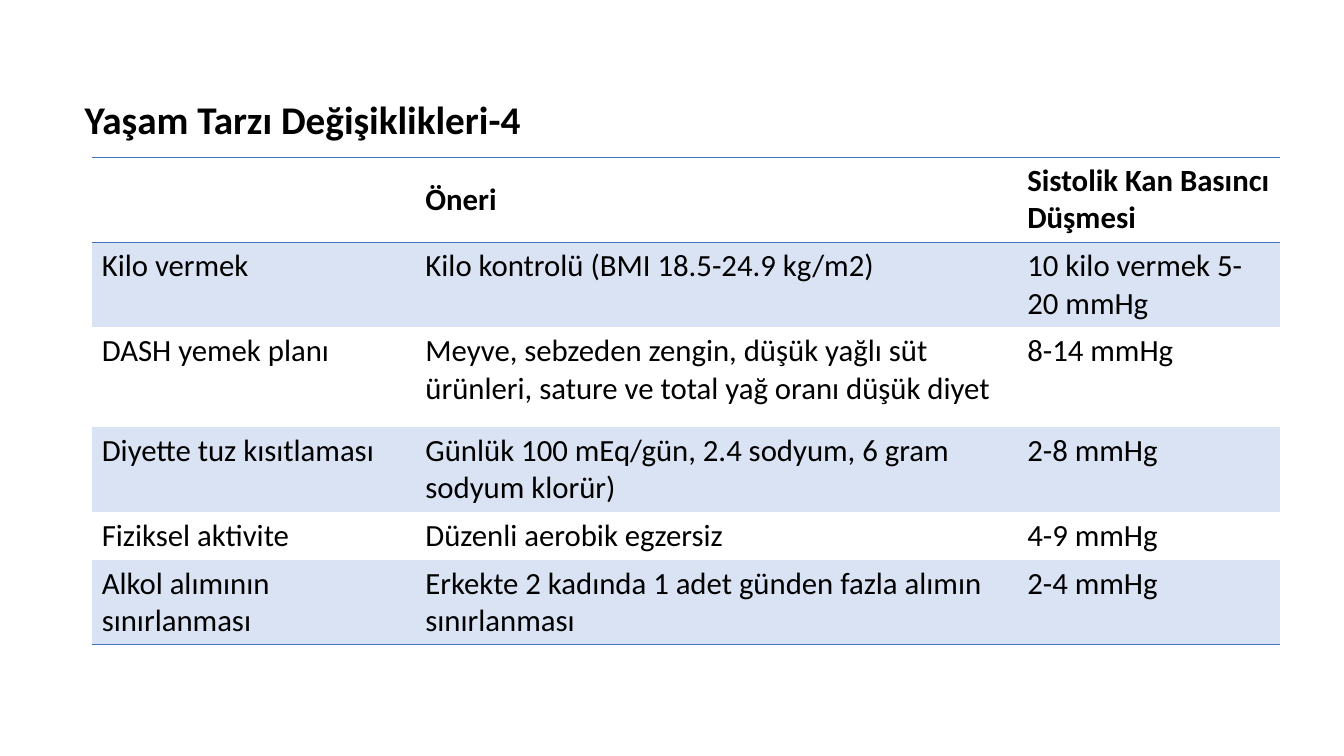
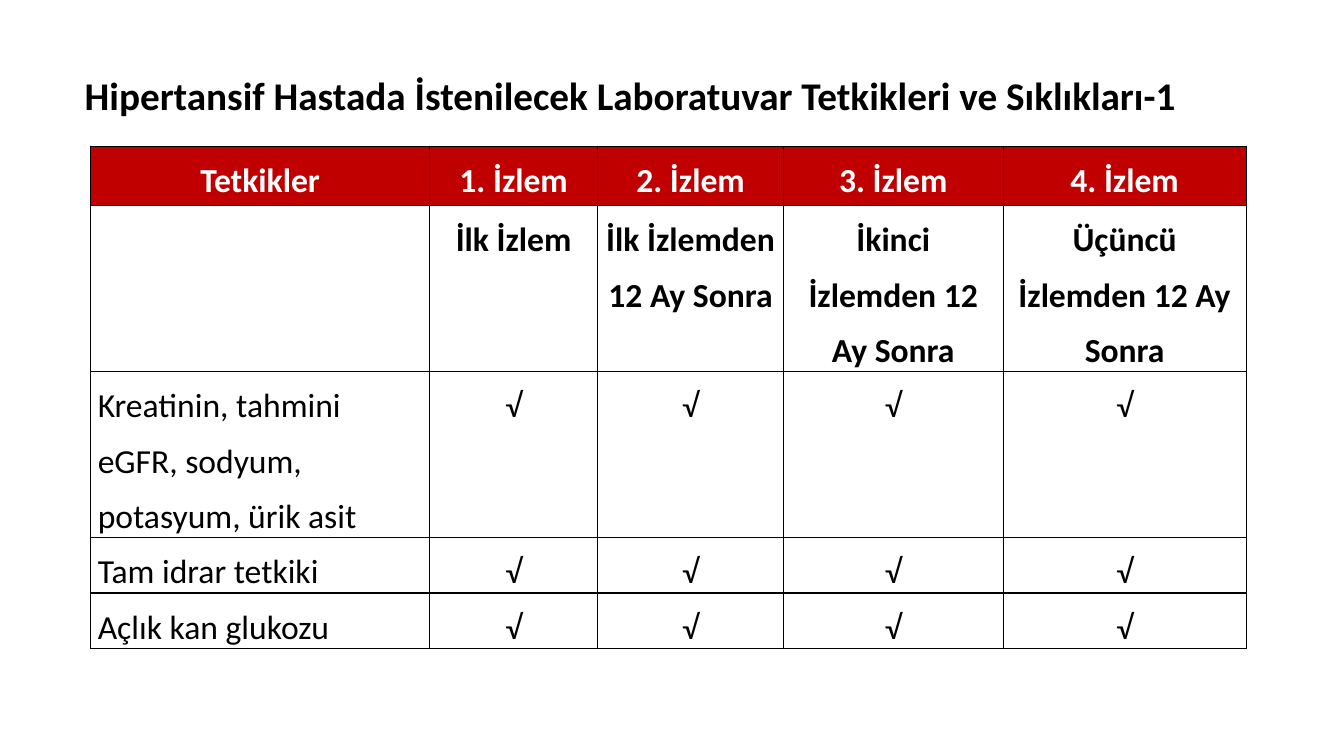
from dataclasses import dataclass

from lxml import etree
from pptx import Presentation
from pptx.dml.color import RGBColor
from pptx.enum.text import MSO_ANCHOR, MSO_AUTO_SIZE, PP_ALIGN
from pptx.oxml.ns import qn
from pptx.util import Inches, Pt

LEFT, CENTER = PP_ALIGN.LEFT, PP_ALIGN.CENTER
TOP, MIDDLE = MSO_ANCHOR.TOP, MSO_ANCHOR.MIDDLE
NO_AUTOFIT = MSO_AUTO_SIZE.NONE

SLIDE_WIDTH, SLIDE_HEIGHT = 13.33, 7.5
TITLE_LEFT, TITLE_TOP, TITLE_HEIGHT = 0.74, 0.66, 0.57
TITLE_ONLY = 5
PLAIN_TABLE_STYLE = "{2D5ABB26-0587-4C30-8999-92F81FD0307C}"
FONT = "Calibri"
BLACK, WHITE = "000000", "FFFFFF"
BLUE, PALE_BLUE, RED = "4472C4", "DAE3F3", "C00000"
ALL_SIDES = ("L", "R", "T", "B")
CHECK = "√"


@dataclass(frozen=True)
class TitleStyle:
    text: str
    width: float
    spacing: float = 1.0


@dataclass(frozen=True)
class Grid:
    """Table frame: the column and row lengths are in inches."""
    left: float
    top: float
    columns: tuple[float, ...]
    rows: tuple[float, ...]


@dataclass(frozen=True)
class CellStyle:
    size: int
    margins: tuple[float, float]
    spacing: float = 1.0
    bold: bool = False
    color: str = BLACK
    fill: str | None = None
    align: PP_ALIGN = LEFT
    anchor: MSO_ANCHOR = TOP
    border: str = BLACK
    sides: tuple[str, ...] = ()


LIFESTYLE_GRID = Grid(0.91, 1.56, (3.21, 5.97, 2.61), (0.83, 0.83, 0.99, 0.83, 0.47, 0.83))
LIFESTYLE_ROWS = (
    ("", "Öneri", "Sistolik Kan Basıncı Düşmesi"),
    ("Kilo vermek", "Kilo kontrolü (BMI 18.5-24.9 kg/m2)", "10 kilo vermek 5-20 mmHg"),
    ("DASH yemek planı",
     "Meyve, sebzeden zengin, düşük yağlı süt ürünleri, sature ve total yağ oranı düşük diyet",
     "8-14 mmHg"),
    ("Diyette tuz kısıtlaması", "Günlük 100 mEq/gün, 2.4 sodyum, 6 gram sodyum klorür)",
     "2-8 mmHg"),
    ("Fiziksel aktivite", "Düzenli aerobik egzersiz", "4-9 mmHg"),
    ("Alkol alımının sınırlanması",
     "Erkekte 2 kadında 1 adet günden fazla alımın sınırlanması", "2-4 mmHg"),
)

LAB_GRID = Grid(0.9, 1.45, (3.36, 1.67, 1.84, 2.18, 2.41), (0.59, 1.62, 1.62, 0.54, 0.54))
LAB_TESTS = ("Kreatinin, tahmini eGFR, sodyum, potasyum, ürik asit",
             "Tam idrar tetkiki", "Açlık kan glukozu")
LAB_ROWS = (
    ("Tetkikler", *(f"{visit}. İzlem" for visit in range(1, 5))),
    ("", "İlk İzlem", "İlk İzlemden 12 Ay Sonra", "İkinci İzlemden 12 Ay Sonra",
     "Üçüncü İzlemden 12 Ay Sonra"),
    *((test, *[CHECK] * 4) for test in LAB_TESTS),
)


def rgb(color: str) -> RGBColor:
    return RGBColor.from_string(color)


def write_text(frame, text: str, *, size: int, bold: bool = False, color: str = BLACK,
               align: PP_ALIGN = LEFT, spacing: float = 1.0) -> None:
    paragraph = frame.paragraphs[0]
    paragraph.alignment = align
    paragraph.line_spacing = spacing
    font = paragraph.font
    if text:
        run = paragraph.add_run()
        run.text = text
        font = run.font
    font.name, font.size, font.bold = FONT, Pt(size), bold
    font.color.rgb = rgb(color)


def add_titled_slide(presentation, title: TitleStyle):
    slide = presentation.slides.add_slide(presentation.slide_layouts[TITLE_ONLY])
    shape = slide.shapes.title
    shape.left, shape.top = Inches(TITLE_LEFT), Inches(TITLE_TOP)
    shape.width, shape.height = Inches(title.width), Inches(TITLE_HEIGHT)
    frame = shape.text_frame
    frame.word_wrap, frame.auto_size = True, NO_AUTOFIT
    frame.vertical_anchor = TOP
    write_text(frame, title.text, size=28, bold=True, spacing=title.spacing)
    return slide


def draw_borders(cell, sides: tuple[str, ...], color: str) -> None:
    """Put the side lines ahead of the fill, as the cell's schema asks."""
    properties = cell._tc.get_or_add_tcPr()
    for index, side in enumerate(sides):
        line = etree.Element(qn(f"a:ln{side}"), w=str(Pt(1)))
        fill = etree.SubElement(line, qn("a:solidFill"))
        etree.SubElement(fill, qn("a:srgbClr"), val=color)
        properties.insert(index, line)


def format_cell(cell, text: str, style: CellStyle) -> None:
    horizontal, vertical = (Inches(margin) for margin in style.margins)
    cell.margin_left = cell.margin_right = horizontal
    cell.margin_top = cell.margin_bottom = vertical
    cell.vertical_anchor = style.anchor
    if style.fill:
        cell.fill.solid()
        cell.fill.fore_color.rgb = rgb(style.fill)
    else:
        cell.fill.background()
    draw_borders(cell, style.sides, style.border)
    write_text(cell.text_frame, text, size=style.size, bold=style.bold, color=style.color,
               align=style.align, spacing=style.spacing)


def add_grid_table(slide, grid: Grid, rows, style_of) -> None:
    """Draw the rows; style_of gives the style for a row and column index."""
    table = slide.shapes.add_table(
        len(grid.rows), len(grid.columns), Inches(grid.left), Inches(grid.top),
        Inches(sum(grid.columns)), Inches(sum(grid.rows))).table
    table._tbl.tblPr.find(qn("a:tableStyleId")).text = PLAIN_TABLE_STYLE
    table.horz_banding = False
    for column, width in zip(table.columns, grid.columns):
        column.width = Inches(width)
    for row, height in zip(table.rows, grid.rows):
        row.height = Inches(height)
    for row_index, texts in enumerate(rows):
        for column_index, text in enumerate(texts):
            format_cell(table.cell(row_index, column_index), text,
                        style_of(row_index, column_index))


def lifestyle_style(row: int, column: int) -> CellStyle:
    header, last = row == 0, row == len(LIFESTYLE_ROWS) - 1
    sides = ("T", "B") if header else ("B",) if last else ()
    return CellStyle(22, (0.1, 0.05), bold=header, fill=PALE_BLUE if row % 2 else None,
                     anchor=MIDDLE if header and column == 1 else TOP,
                     border=BLUE, sides=sides)


def lab_style(row: int, column: int) -> CellStyle:
    header = row == 0
    return CellStyle(24, (0.07, 0), spacing=1.35, bold=row < 2,
                     color=WHITE if header else BLACK, fill=RED if header else None,
                     align=CENTER if header or column else LEFT, sides=ALL_SIDES)


def main() -> None:
    presentation = Presentation()
    presentation.slide_width = Inches(SLIDE_WIDTH)
    presentation.slide_height = Inches(SLIDE_HEIGHT)

    lifestyle = add_titled_slide(
        presentation, TitleStyle("Yaşam Tarzı Değişiklikleri-4", 10, spacing=1.5))
    add_grid_table(lifestyle, LIFESTYLE_GRID, LIFESTYLE_ROWS, lifestyle_style)

    laboratory = add_titled_slide(presentation, TitleStyle(
        "Hipertansif Hastada İstenilecek Laboratuvar Tetkikleri ve Sıklıkları-1", 11.63))
    add_grid_table(laboratory, LAB_GRID, LAB_ROWS, lab_style)

    presentation.save("out.pptx")


if __name__ == "__main__":
    main()
